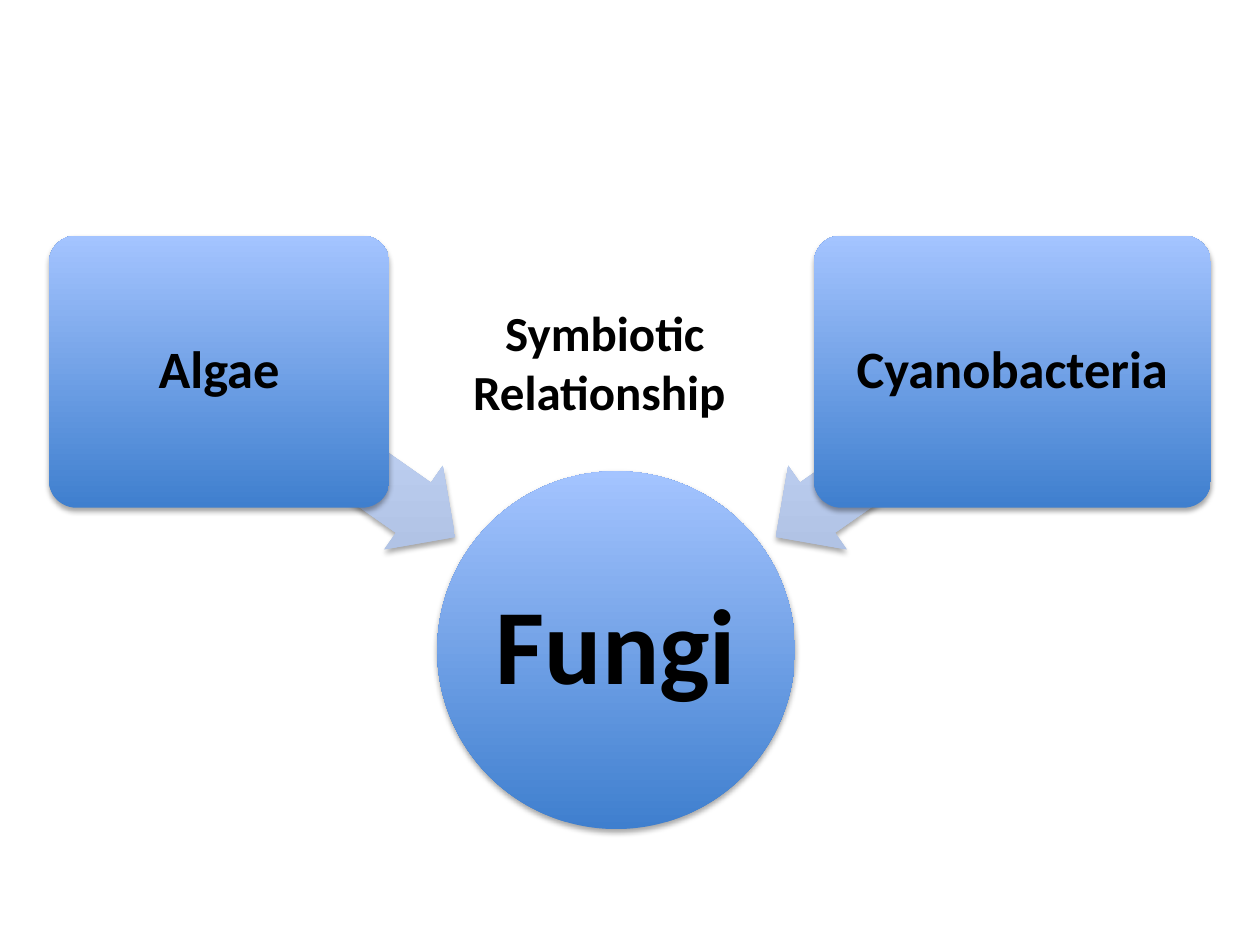
from typing import NamedTuple

from lxml.etree import SubElement
from pptx import Presentation
from pptx.dml.color import RGBColor
from pptx.enum.shapes import MSO_SHAPE as Kind
from pptx.enum.text import MSO_ANCHOR as Anchor, PP_ALIGN as Align
from pptx.oxml.ns import qn
from pptx.util import Inches, Pt

DARK, LIGHT = "3F7FCE", "A4C4FF"
PALE = ("ADBFE1", "CCDDFF")


class Node(NamedTuple):
    kind: Kind
    left: float
    top: float
    width: float
    height: float
    label: str
    size: int
    inset: float


class Arrow(NamedTuple):
    left: float
    turn: int


def paint(color, value: str) -> None:
    color.rgb = RGBColor.from_string(value)


def write(frame, text: str, *, size: int, inset=None, space=None,
          anchor=Anchor.TOP) -> None:
    frame.word_wrap = True
    frame.vertical_anchor = anchor
    if inset is not None:
        for side in ("left", "right", "top", "bottom"):
            setattr(frame, f"margin_{side}", Inches(inset))
    para = frame.paragraphs[0]
    para.alignment = Align.CENTER
    para.line_spacing = space
    run = para.add_run()
    run.text = text
    run.font.name = "Calibri"
    run.font.size = Pt(size)
    run.font.bold = True
    paint(run.font.color, "000000")


def shade(shape) -> None:
    shape.shadow.inherit = False
    effects = shape.element.spPr.find(qn("a:effectLst"))
    shadow = SubElement(effects, qn("a:outerShdw"), blurRad=str(Pt(3.1)),
                        dist=str(Pt(1.8)), dir="5400000", rotWithShape="0")
    color = SubElement(shadow, qn("a:srgbClr"), val="000000")
    SubElement(color, qn("a:alpha"), val="35000")


def draw(shapes, kind: Kind, left: float, top: float, width: float,
         height: float, low: str, high: str):
    shape = shapes.add_shape(kind, Inches(left), Inches(top),
                             Inches(width), Inches(height))
    shape.line.fill.background()
    shape.fill.gradient()
    shape.fill.gradient_angle = 90
    for stop, place, value in zip(shape.fill.gradient_stops, (0, 1), (low, high)):
        stop.position = place
        paint(stop.color, value)
    shape.element.spPr.find(qn("a:gradFill")).set("rotWithShape", "0")
    shade(shape)
    return shape


def add_node(shapes, node: Node) -> None:
    shape = draw(shapes, *node[:5], DARK, LIGHT)
    if node.kind == Kind.ROUNDED_RECTANGLE:
        shape.adjustments[0] = 0.1
    write(shape.text_frame, node.label, size=node.size, inset=node.inset,
          space=0.9, anchor=Anchor.MIDDLE)


def add_arrow(shapes, arrow: Arrow) -> None:
    shape = draw(shapes, Kind.LEFT_ARROW, arrow.left, 3.2, 2.29, 0.81, *PALE)
    shape.adjustments[0] = 0.6
    shape.adjustments[1] = 0.5
    shape.rotation = arrow.turn


def main() -> None:
    deck = Presentation()
    deck.slide_width, deck.slide_height = Inches(10), Inches(7.5)
    shapes = deck.slides.add_slide(deck.slide_layouts[6]).shapes

    add_node(shapes, Node(Kind.OVAL, 3.47, 3.74, 2.84, 2.84, "Fungi", 61, 0.04))
    pairs = (
        (Arrow(1.53, 215),
         Node(Kind.ROUNDED_RECTANGLE, 0.39, 1.87, 2.7, 2.16, "Algae", 30, 0.06)),
        (Arrow(5.95, 325),
         Node(Kind.ROUNDED_RECTANGLE, 6.46, 1.87, 3.15, 2.16,
              "Cyanobacteria", 30, 0.06)),
    )
    for arrow, node in pairs:
        add_arrow(shapes, arrow)
        add_node(shapes, node)

    title = shapes.add_textbox(Inches(3.46), Inches(2.35), Inches(2.68), Inches(1.35))
    write(title.text_frame, "Symbiotic Relationship ", size=28)
    deck.save("out.pptx")


if __name__ == "__main__":
    main()
